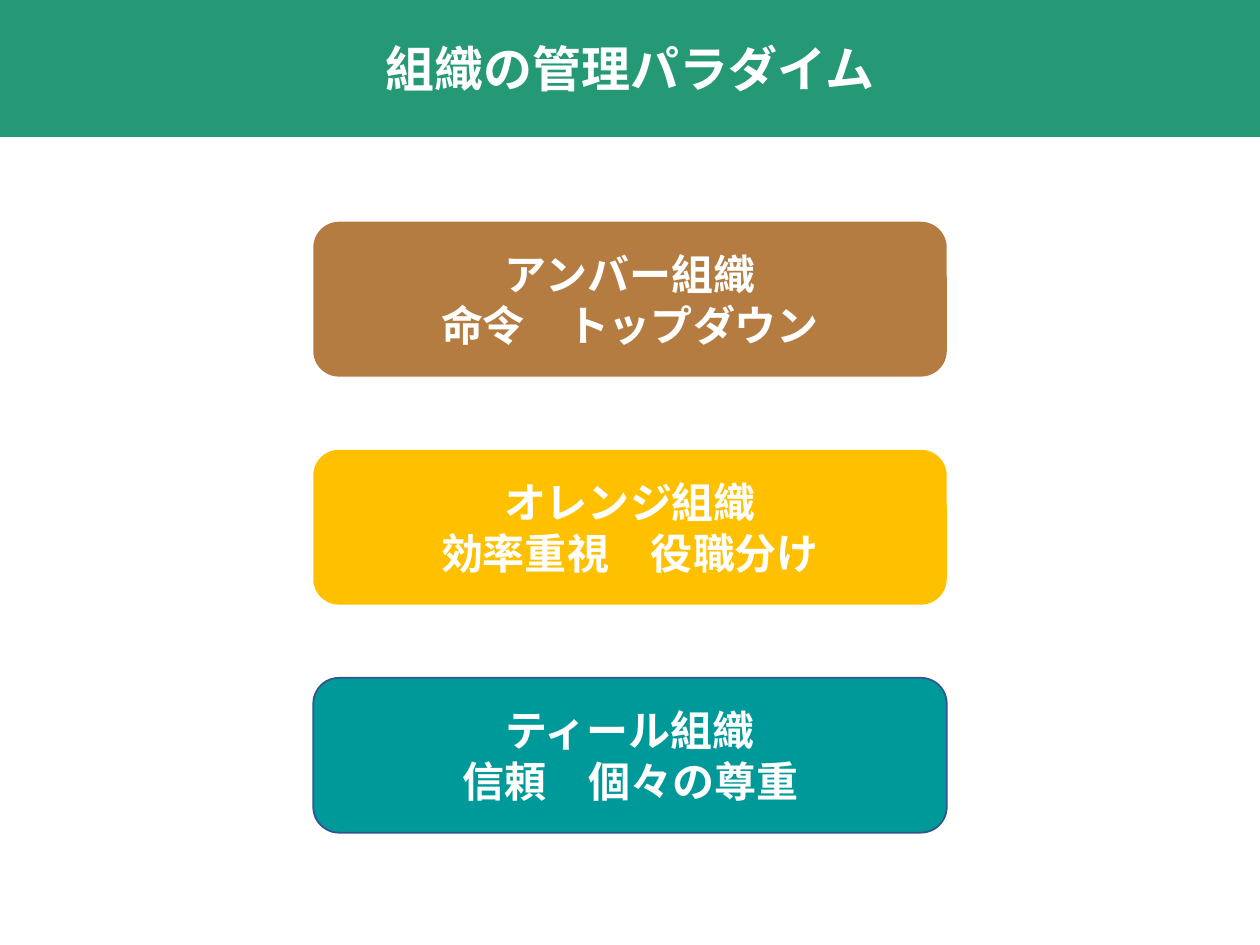
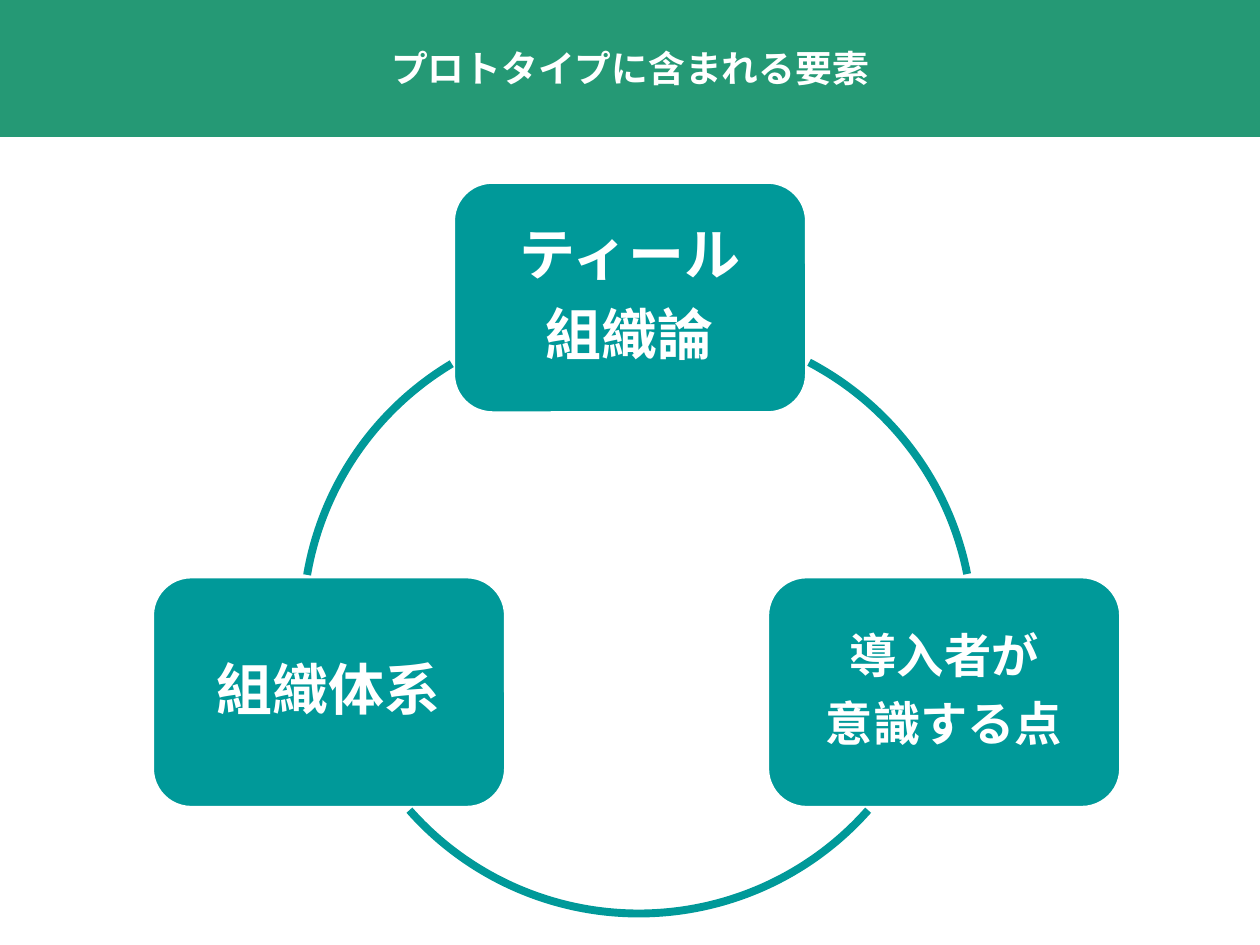
from pptx import Presentation, util as u
from pptx.dml.color import RGBColor
from pptx.enum import shapes, text

Pt = u.Pt
KIND = shapes.MSO_SHAPE
WIDE, HIGH = 720, 540
FONT = "Calibri"
HUES = {
    "band": "259975",
    "amber": "B47C40",
    "orange": "FFC000",
    "teal": "009999",
    "edge": "325491",
    "white": "FFFFFF",
}


class Deck:
    def __init__(self):
        self.prs = Presentation()
        self.prs.slide_width, self.prs.slide_height = Pt(WIDE), Pt(HIGH)
        self.slide = None

    def hue(self, name):
        return RGBColor.from_string(HUES[name])

    def page(self, title, size):
        """Start a slide with the title band."""
        self.slide = self.prs.slides.add_slide(self.prs.slide_layouts[6])
        band = self.shape(KIND.RECTANGLE, (0, 0, WIDE, 78), "band", "band")
        self.label(band, [title], size)

    def shape(self, kind, box, fill=None, line=None, width=1):
        item = self.slide.shapes.add_shape(kind, *map(Pt, box))
        item.shadow.inherit = False
        if fill:
            item.fill.solid()
            item.fill.fore_color.rgb = self.hue(fill)
        else:
            item.fill.background()
        if line:
            item.line.color.rgb = self.hue(line)
            item.line.width = Pt(width)
        else:
            item.line.fill.background()
        return item

    def label(self, item, lines, size, pad=None, lead=None, after=None):
        """Fill a shape with centred bold white lines."""
        frame = item.text_frame
        frame.word_wrap = True
        frame.vertical_anchor = text.MSO_ANCHOR.MIDDLE
        if pad is not None:
            frame.margin_left = frame.margin_right = Pt(pad)
            frame.margin_top = frame.margin_bottom = Pt(pad)
        for i, line in enumerate(lines):
            para = frame.add_paragraph() if i else frame.paragraphs[0]
            para.alignment = text.PP_ALIGN.CENTER
            if lead:
                para.line_spacing = lead
            if after:
                para.space_after = Pt(after)
            run = para.add_run()
            run.text = line
            font = run.font
            font.name, font.size, font.bold = FONT, Pt(size), True
            font.color.rgb = self.hue("white")

    def card(self, box, lines, size, fill, line=None, **style):
        item = self.shape(KIND.ROUNDED_RECTANGLE, box, fill, line)
        self.label(item, lines, size, **style)

    def arc(self, left, top, side, start, end):
        """Draw a clockwise arc; angles in degrees from three o'clock."""
        item = self.shape(KIND.ARC, (left, top, side, side), None, "teal", 4.5)
        # One degree is 60000 units; adjustments count in 100000 units
        for i, angle in enumerate((start, end)):
            item.adjustments[i] = angle * 0.6


def stages(deck):
    deck.page("組織の管理パラダイム", 28)
    wide, high, top, step = 362, 88.5, 126.75, 130.3
    cards = [
        (["アンバー組織", "命令　トップダウン"], "amber", None),
        (["オレンジ組織", "効率重視　役職分け"], "orange", None),
        (["ティール組織", "信頼　個々の尊重"], "teal", "edge"),
    ]
    for i, (lines, fill, edge) in enumerate(cards):
        box = ((WIDE - wide) / 2, top + i * step, wide, high)
        deck.card(box, lines, 24, fill, edge)


def cycle(deck):
    deck.page("プロトタイプに含まれる要素", 21)
    wide, high, side = 201, 131, 350
    # Nodes: left, top, lines, text size, inset
    nodes = [
        (259.5, 104.5, ["ティール", "組織論"], 32, 9.5),
        (439, 330, ["導入者が", "意識する点"], 27, 8),
        (87.5, 330, ["組織体系"], 32, 9.5),
    ]
    for left, top, lines, size, pad in nodes:
        deck.card((left, top, wide, high), lines, size, "teal", "white",
                  pad=pad, lead=0.9, after=0.35 * size)
    # Links between nodes: left, top, start, end
    links = [
        (206, 187, 297.7, 348.8),
        (190, 172, 41.5, 138.5),
        (173, 183, 189.7, 239.1),
    ]
    for left, top, start, end in links:
        deck.arc(left, top, side, start, end)


def main():
    deck = Deck()
    stages(deck)
    cycle(deck)
    deck.prs.save("out.pptx")


if __name__ == "__main__":
    main()
